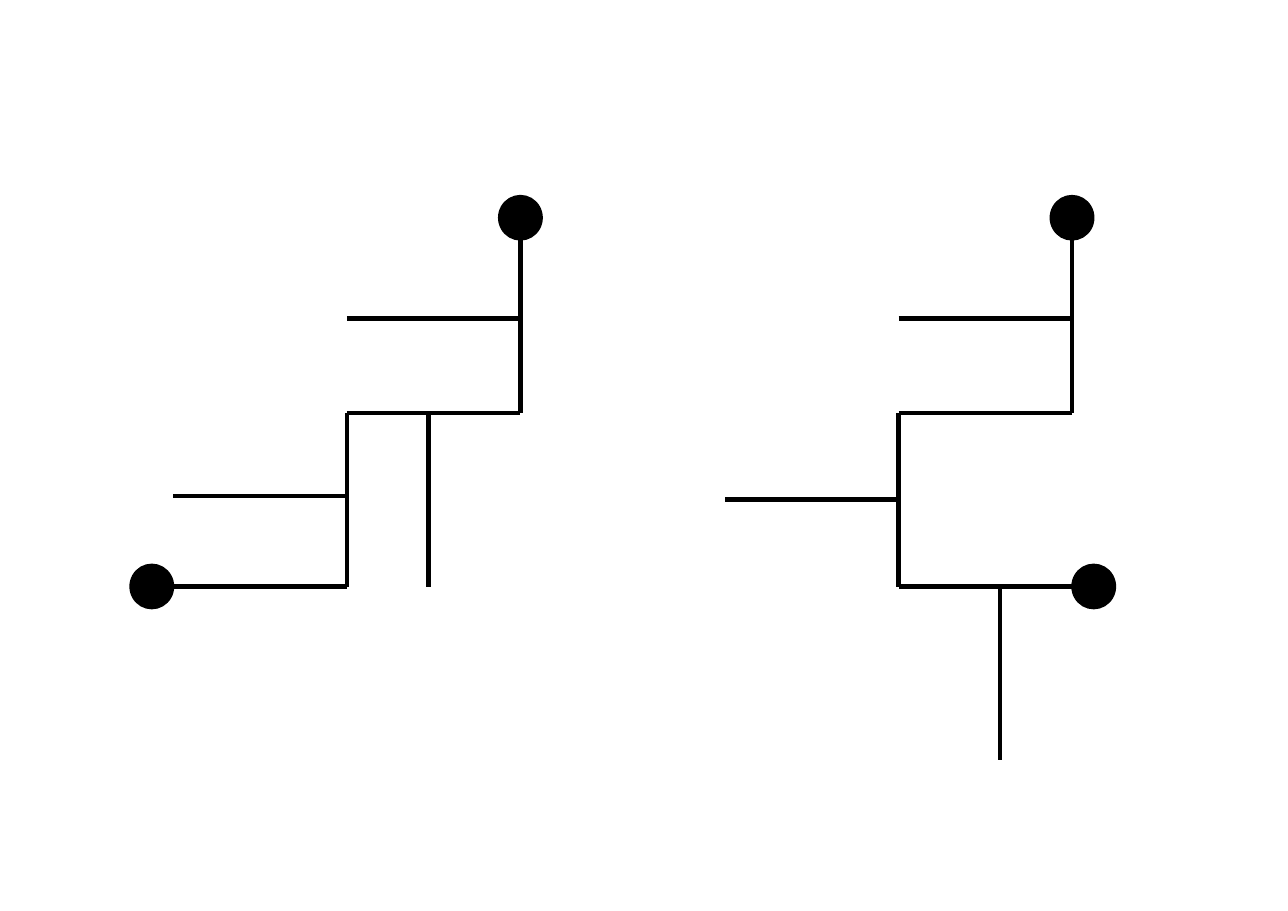
from lxml import etree
from pptx import Presentation
from pptx.dml.color import RGBColor
from pptx.enum import shapes
from pptx.oxml import ns
from pptx.util import Cm, Pt

BLACK = RGBColor(0x00, 0x00, 0x00)

# Lengths in cm: every line is one step long
STEP = 4
TOP, MIDDLE, BOTTOM = 5.52, 9.52, 13.52
UPPER_BRANCH = 7.34
DOT_LENGTH, DOT_WIDTH = 1.02, 1
DOT_OFFSET = 0.5


def add_line(group, x, y, vertical=False):
    """Draw a line one step long, rightwards or downwards from (x, y)."""
    end_x, end_y = (x, y + STEP) if vertical else (x + STEP, y)
    line = group.shapes.add_connector(
        shapes.MSO_CONNECTOR.STRAIGHT, Cm(x), Cm(y), Cm(end_x), Cm(end_y))
    line.line.color.rgb = BLACK
    line.line.width = Pt(3)
    etree.SubElement(line._element.spPr, ns.qn("a:effectLst"))


def add_dot(group, x, y):
    """Draw a filled end dot centred on (x, y)."""
    dot = group.shapes.add_shape(
        shapes.MSO_SHAPE.FLOWCHART_CONNECTOR,
        Cm(x - DOT_LENGTH / 2), Cm(y - DOT_WIDTH / 2),
        Cm(DOT_LENGTH), Cm(DOT_WIDTH))
    dot.rotation = 90
    dot.shadow.inherit = False
    dot.fill.solid()
    dot.fill.fore_color.rgb = BLACK
    dot.line.color.rgb = BLACK
    dot.line.width = Pt(1)


def add_figure(slide, left, lower_branch, foot, hanger, end_dot):
    """Draw a stepped path; foot and end_dot are x, hanger is (x, y)."""
    group = slide.shapes.add_group_shape()
    inner, outer = left + STEP, left + 2 * STEP

    # Path from the top dot to the bottom dot
    add_line(group, outer, TOP, vertical=True)
    add_line(group, inner, MIDDLE)
    add_line(group, inner, MIDDLE, vertical=True)
    add_line(group, foot, BOTTOM)

    # Side branches
    add_line(group, inner, UPPER_BRANCH)
    add_line(group, left, lower_branch)
    add_line(group, *hanger, vertical=True)

    # End dots
    add_dot(group, outer, TOP - DOT_OFFSET)
    add_dot(group, end_dot, BOTTOM)


def main():
    presentation = Presentation()
    presentation.slide_width = Cm(29.7)
    presentation.slide_height = Cm(21)
    slide = presentation.slides.add_slide(presentation.slide_layouts[6])

    # Left figure: the path ends to the left
    left = 4
    add_figure(slide, left, lower_branch=11.43, foot=left,
               hanger=(9.88, MIDDLE), end_dot=left - DOT_OFFSET)

    # Right figure: the path turns back to the right
    left = 16.72
    add_figure(slide, left, lower_branch=11.51, foot=left + STEP,
               hanger=(23.06, BOTTOM), end_dot=left + 2 * STEP + DOT_OFFSET)

    presentation.save("out.pptx")


if __name__ == "__main__":
    main()
